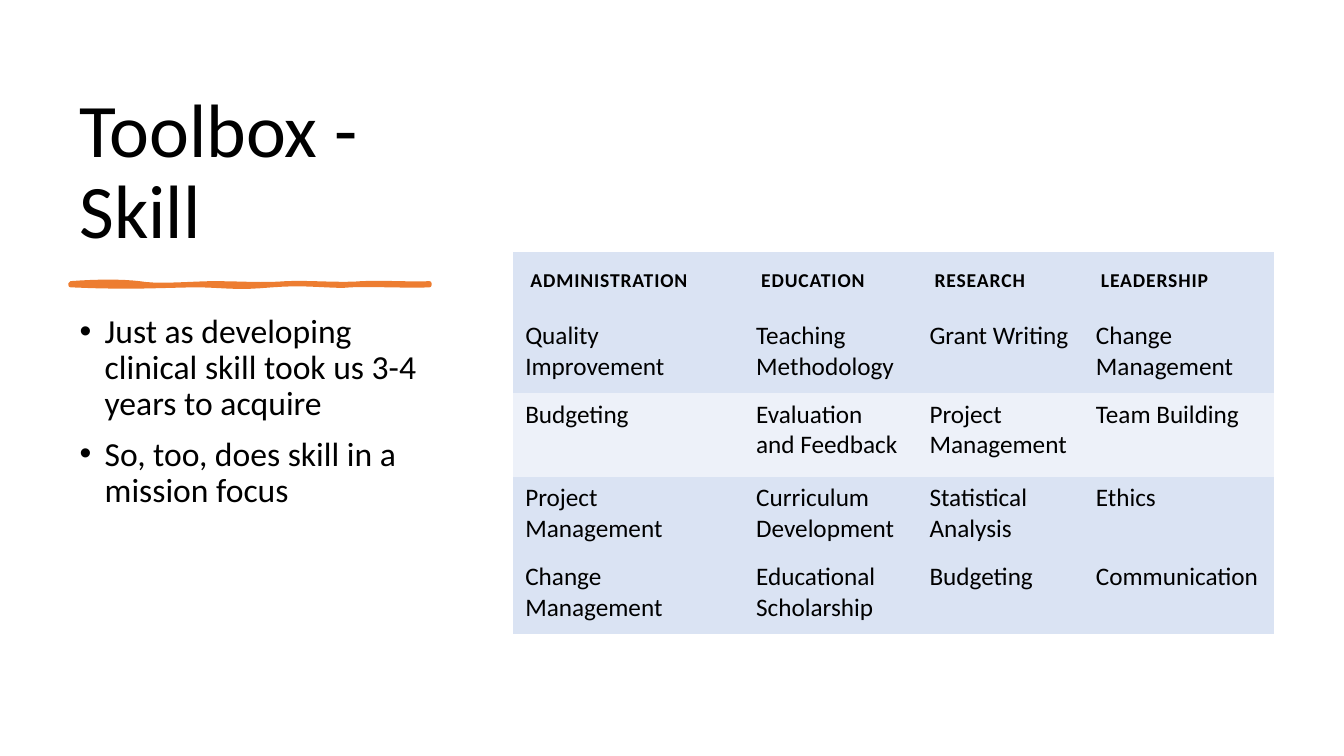
from pptx import Presentation
from pptx import util as u
from pptx.dml.color import RGBColor
from pptx.enum import text
from pptx.oxml.ns import qn
from lxml import etree

COLORS = {"black": "000000", "orange": "ED7D31", "blue": "DAE3F3", "pale": "EDF1F9"}
FONT = "Calibri"
NO_STYLE = "{2D5ABB26-0587-4C30-8999-92F81FD0307C}"

TITLE = "Toolbox - Skill"
POINTS = [
    "Just as developing clinical skill took us 3-4 years to acquire",
    "So, too, does skill in a mission focus",
]
SKILLS = [
    ["ADMINISTRATION", "EDUCATION", "RESEARCH", "LEADERSHIP"],
    ["Quality Improvement", "Teaching Methodology", "Grant Writing", "Change Management"],
    ["Budgeting", "Evaluation and Feedback", "Project Management", "Team Building"],
    ["Project Management", "Curriculum Development", "Statistical Analysis", "Ethics"],
    ["Change Management", "Educational Scholarship", "Budgeting", "Communication"],
]
COLUMN_WIDTHS = [2.29, 1.72, 1.65, 1.89]
ROW_HEIGHTS = [0.62, 0.78, 0.83, 0.78, 0.78]
PALE_ROW = 2

STROKE_START = (0.7, 2.81)
STROKE_CURVES = [
    [(0.97, 2.79), (1.21, 2.79), (1.38, 2.81)],
    [(1.55, 2.84), (1.77, 2.82), (2.09, 2.81)],
    [(2.41, 2.81), (2.6, 2.83), (2.84, 2.81)],
    [(3.08, 2.8), (3.39, 2.83), (3.59, 2.81)],
    [(3.79, 2.8), (4.12, 2.82), (4.26, 2.81)],
    [(4.26, 2.82), (4.26, 2.83), (4.26, 2.83)],
    [(4.08, 2.84), (3.64, 2.82), (3.48, 2.83)],
    [(3.32, 2.85), (3.04, 2.8), (2.7, 2.83)],
    [(2.35, 2.86), (2.31, 2.84), (1.99, 2.83)],
    [(1.66, 2.83), (1.32, 2.86), (0.7, 2.83)],
]
CURVE_STEPS = 8


def color(name):
    return RGBColor.from_string(COLORS[name])


def write(paragraph, content, size, bold=False, tracking=0, line=1.0, before=0, bullet=None):
    paragraph.line_spacing = line
    paragraph.space_before = u.Pt(before)
    run = paragraph.add_run()
    run.text = content
    run.font.name = FONT
    run.font.size = u.Pt(size)
    run.font.bold = bold
    run.font.color.rgb = color("black")
    if tracking:
        run.font._element.set("spc", str(int(tracking * 100)))
    if bullet:
        properties = paragraph._p.get_or_add_pPr()
        properties.set("marL", str(u.Inches(0.25)))
        properties.set("indent", str(-u.Inches(0.25)))
        etree.SubElement(properties, qn("a:buFont")).set("typeface", "Arial")
        etree.SubElement(properties, qn("a:buChar")).set("char", bullet)


def add_text_frame(slide, left, top, width, height, anchor):
    box = slide.shapes.add_textbox(*map(u.Inches, (left, top, width, height)))
    box.text_frame.word_wrap = True
    box.text_frame.vertical_anchor = anchor
    return box.text_frame


def curve_points(start, curves):
    points = []
    for first, second, end in curves:
        for step in range(1, CURVE_STEPS + 1):
            t = step / CURVE_STEPS
            weights = ((1 - t) ** 3, 3 * t * (1 - t) ** 2, 3 * t ** 2 * (1 - t), t ** 3)
            corners = (start, first, second, end)
            points.append(tuple(
                u.Inches(sum(w * corner[axis] for w, corner in zip(weights, corners)))
                for axis in (0, 1)
            ))
        start = end
    return points


def add_brush_stroke(slide):
    builder = slide.shapes.build_freeform(*map(u.Inches, STROKE_START))
    builder.add_line_segments(curve_points(STROKE_START, STROKE_CURVES), close=True)
    stroke = builder.convert_to_shape()
    stroke.shadow.inherit = False
    stroke.fill.solid()
    stroke.fill.fore_color.rgb = color("orange")
    stroke.line.color.rgb = color("orange")
    stroke.line.width = u.Pt(3)


def add_skill_table(slide):
    area = (5.09, 2.5, sum(COLUMN_WIDTHS), sum(ROW_HEIGHTS))
    frame = slide.shapes.add_table(len(SKILLS), len(COLUMN_WIDTHS), *map(u.Inches, area))
    table = frame.table
    table.first_row = table.horz_banding = False
    table._tbl.tblPr.find(qn("a:tableStyleId")).text = NO_STYLE
    for column, width in zip(table.columns, COLUMN_WIDTHS):
        column.width = u.Inches(width)
    for row, (height, skills) in enumerate(zip(ROW_HEIGHTS, SKILLS)):
        table.rows[row].height = u.Inches(height)
        header = row == 0
        side, top = (0.17, 0.17) if header else (0.12, 0.06)
        for column, skill in enumerate(skills):
            cell = table.cell(row, column)
            cell.margin_left = cell.margin_right = cell.margin_bottom = u.Inches(side)
            cell.margin_top = u.Inches(top)
            cell.fill.solid()
            cell.fill.fore_color.rgb = color("pale" if row == PALE_ROW else "blue")
            write(cell.text_frame.paragraphs[0], skill, size=14 if header else 18,
                  bold=header, tracking=0.6 if header else 0)


def main():
    presentation = Presentation()
    presentation.slide_width = u.Inches(13.33)
    presentation.slide_height = u.Inches(7.5)
    slide = presentation.slides.add_slide(presentation.slide_layouts[6])

    title = add_text_frame(slide, 0.69, 0.7, 3.75, 1.88, text.MSO_ANCHOR.BOTTOM)
    write(title.paragraphs[0], TITLE, size=54, line=0.9)
    add_brush_stroke(slide)

    body = add_text_frame(slide, 0.69, 3.07, 3.75, 3.73, text.MSO_ANCHOR.TOP)
    for index, point in enumerate(POINTS):
        paragraph = body.add_paragraph() if index else body.paragraphs[0]
        write(paragraph, point, size=24, line=0.9, before=10, bullet="•")
    add_skill_table(slide)
    presentation.save("out.pptx")


if __name__ == "__main__":
    main()
